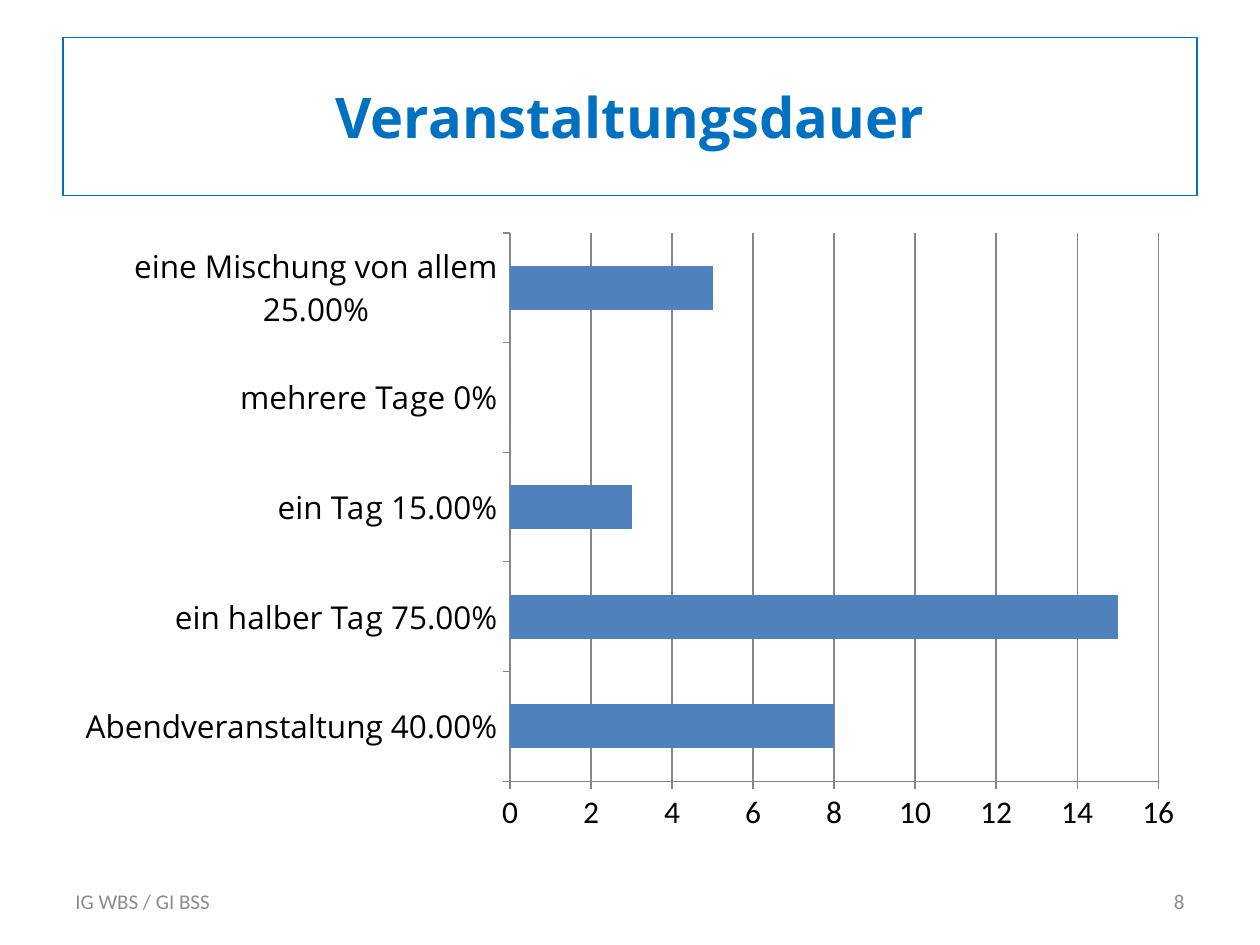
import pptx
import pptx.chart.data
import pptx.dml.color
import pptx.enum.chart
import pptx.enum.text
import pptx.util

RGBColor = pptx.dml.color.RGBColor
Inches = pptx.util.Inches
Pt = pptx.util.Pt
PP_ALIGN = pptx.enum.text.PP_ALIGN

BLUE = RGBColor(0x00, 0x70, 0xC0)
BAR = RGBColor(0x4F, 0x81, 0xBD)
GREY = RGBColor(0x8C, 0x8C, 0x8C)
AXIS = RGBColor(0x86, 0x86, 0x86)
BLACK = RGBColor(0, 0, 0)

DURATIONS = {
    "Abendveranstaltung 40.00%": 8,
    "ein halber Tag 75.00%": 15,
    "ein Tag 15.00%": 3,
    "mehrere Tage 0%": 0,
    "eine Mischung von allem 25.00%": 5,
}


class Deck:
    title_font = {"name": "Open Sans", "size": Pt(32), "bold": True}
    category_font = {"name": "Open Sans", "size": Pt(18)}
    value_font = {"name": "Calibri", "size": Pt(18)}
    footer_font = {"name": "Calibri", "size": Pt(12)}

    def __init__(self, prs):
        self.s = prs.slides.add_slide(prs.slide_layouts[5])

    def style_font(self, font, values, color):
        for key, value in values.items():
            setattr(font, key, value)
        font.color.rgb = color

    def place(self, sp, x, y, w, h):
        sp.left, sp.top, sp.width, sp.height = map(Inches, (x, y, w, h))

    def set_text(self, sp, text, align, values, color):
        tf = sp.text_frame
        tf.word_wrap = True
        tf.vertical_anchor = pptx.enum.text.MSO_ANCHOR.MIDDLE
        p = tf.paragraphs[0]
        p.alignment = align
        r = p.add_run()
        r.text = text
        self.style_font(r.font, values, color)

    def title(self, text, *box):
        sp = self.s.shapes.title
        self.place(sp, *box)
        sp.line.color.rgb = BLUE
        sp.line.width = Pt(0.75)
        self.set_text(sp, text, PP_ALIGN.CENTER, self.title_font, BLUE)

    def footer(self, text, align, *box):
        sp = self.s.shapes.add_textbox(*map(Inches, box))
        self.set_text(sp, text, align, self.footer_font, GREY)

    def axis(self, axis, values):
        axis.major_tick_mark = pptx.enum.chart.XL_TICK_MARK.OUTSIDE
        axis.minor_tick_mark = pptx.enum.chart.XL_TICK_MARK.NONE
        axis.format.line.color.rgb = AXIS
        self.style_font(axis.tick_labels.font, values, BLACK)

    def bar_chart(self, name, values, *box):
        data = pptx.chart.data.CategoryChartData()
        data.categories = list(values)
        data.add_series(name, list(values.values()))
        chart = self.s.shapes.add_chart(
            pptx.enum.chart.XL_CHART_TYPE.BAR_CLUSTERED, *map(Inches, box), data
        ).chart
        chart.has_legend = False
        chart.has_title = False
        self.style_font(chart.font, self.value_font, BLACK)
        plot = chart.plots[0]
        plot.gap_width = 150
        plot.vary_by_categories = False
        fill = plot.series[0].format.fill
        fill.solid()
        fill.fore_color.rgb = BAR
        self.axis(chart.category_axis, self.category_font)
        self.axis(chart.value_axis, self.value_font)
        chart.value_axis.has_major_gridlines = True
        chart.value_axis.major_gridlines.format.line.color.rgb = AXIS


def main():
    prs = pptx.Presentation()
    prs.slide_width, prs.slide_height = Inches(10), Inches(7.5)
    deck = Deck(prs)
    deck.title("Veranstaltungsdauer", 0.5, 0.3, 9, 1.25)
    deck.bar_chart("Series 1", DURATIONS, 0.5, 1.75, 9, 4.95)
    deck.footer("IG WBS / GI BSS", PP_ALIGN.LEFT, 0.5, 6.95, 2.33, 0.4)
    deck.footer("8", PP_ALIGN.RIGHT, 7.17, 6.95, 2.33, 0.4)
    prs.save("out.pptx")


if __name__ == "__main__":
    main()
